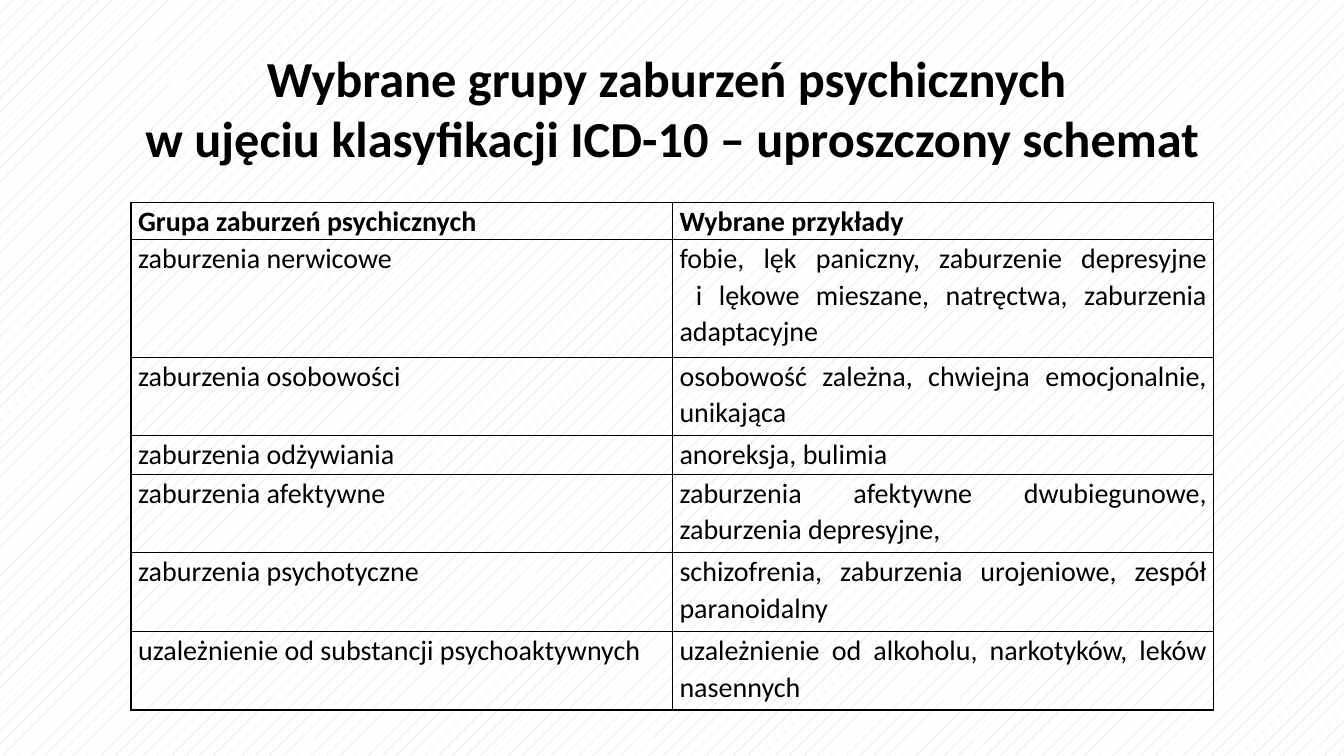
from lxml.etree import SubElement
from pptx import Presentation
from pptx.dml.color import RGBColor
from pptx.enum.dml import MSO_PATTERN
from pptx.enum.text import MSO_ANCHOR, MSO_AUTO_SIZE, PP_ALIGN
from pptx.oxml.ns import qn
from pptx.util import Inches, Pt

BLACK = RGBColor(0x00, 0x00, 0x00)
WHITE = RGBColor(0xFF, 0xFF, 0xFF)
GREY = RGBColor(0xD0, 0xCE, 0xCE)
FONT = "Calibri"
TITLE = ["Wybrane grupy zaburzeń psychicznych ",
         "w ujęciu klasyfikacji ICD-10 – uproszczony schemat"]
COLUMN_WIDTH = 5.37
ROW_HEIGHTS = [0.34, 1.17, 0.78, 0.38, 0.78, 0.78, 0.78]
DISORDERS = [
    (["Grupa zaburzeń psychicznych"], ["Wybrane przykłady"]),
    (["zaburzenia nerwicowe"],
     ["fobie, lęk paniczny, zaburzenie depresyjne",
      " i lękowe mieszane, natręctwa, zaburzenia adaptacyjne"]),
    (["zaburzenia osobowości"],
     ["osobowość zależna, chwiejna emocjonalnie, unikająca"]),
    (["zaburzenia odżywiania"], ["anoreksja, bulimia"]),
    (["zaburzenia afektywne"],
     ["zaburzenia afektywne dwubiegunowe, zaburzenia depresyjne,"]),
    (["zaburzenia psychotyczne"],
     ["schizofrenia, zaburzenia urojeniowe, zespół paranoidalny"]),
    (["uzależnienie od substancji psychoaktywnych"],
     ["uzależnienie od alkoholu, narkotyków, leków nasennych"]),
]


def write_lines(para, lines, size, bold):
    """Write lines into one paragraph, parted by line breaks."""
    for index, line in enumerate(lines):
        if index:
            para.add_line_break()
        span = para.add_run()
        span.text = line
        span.font.name = FONT
        span.font.size = Pt(size)
        span.font.bold = bold
        span.font.color.rgb = BLACK


def paint_background(page):
    """Give the page its light dotted pattern."""
    fill = page.background.fill
    fill.patterned()
    fill.pattern = MSO_PATTERN.PERCENT_5
    fill.fore_color.rgb = GREY
    fill.back_color.rgb = WHITE


def fill_title(page):
    """Place and write the title."""
    box = page.shapes.title
    box.left, box.top = Inches(0.96), Inches(0.37)
    box.width, box.height = Inches(11.42), Inches(1.39)
    frame = box.text_frame
    frame.word_wrap = False
    frame.auto_size = MSO_AUTO_SIZE.NONE
    frame.vertical_anchor = MSO_ANCHOR.MIDDLE
    para = frame.paragraphs[0]
    para.alignment = PP_ALIGN.CENTER
    write_lines(para, TITLE, 36, True)


def draw_borders(cell):
    """Draw a thin black line on each side of a cell."""
    properties = cell._tc.get_or_add_tcPr()
    for side in ("a:lnL", "a:lnR", "a:lnT", "a:lnB"):
        line = SubElement(properties, qn(side), w=str(Pt(1)))
        solid = SubElement(line, qn("a:solidFill"))
        SubElement(solid, qn("a:srgbClr"), val=str(BLACK))


def fill_cell(cell, lines, bold):
    """Format a cell and write its justified text."""
    draw_borders(cell)
    cell.fill.background()
    cell.margin_left = cell.margin_right = Inches(0.07)
    cell.margin_top = cell.margin_bottom = Inches(0)
    para = cell.text_frame.paragraphs[0]
    para.alignment = PP_ALIGN.JUSTIFY
    para.line_spacing = 1.07
    para.space_after = Pt(8)
    write_lines(para, lines, 20, bold)


def add_disorder_table(page):
    """Add the table of disorder groups and examples."""
    table = page.shapes.add_table(
        len(DISORDERS), 2, Inches(1.3), Inches(2.01),
        Inches(2 * COLUMN_WIDTH), Inches(sum(ROW_HEIGHTS))).table
    table.first_row = table.horz_banding = False
    for column in table.columns:
        column.width = Inches(COLUMN_WIDTH)
    for index, (height, texts) in enumerate(zip(ROW_HEIGHTS, DISORDERS)):
        table.rows[index].height = Inches(height)
        for cell, lines in zip(table.rows[index].cells, texts):
            fill_cell(cell, lines, index == 0)


def main():
    """Build the slide and save the deck."""
    deck = Presentation()
    deck.slide_width, deck.slide_height = Inches(13.33), Inches(7.5)
    page = deck.slides.add_slide(deck.slide_layouts[5])
    paint_background(page)
    add_disorder_table(page)
    fill_title(page)
    deck.save("out.pptx")


if __name__ == "__main__":
    main()
